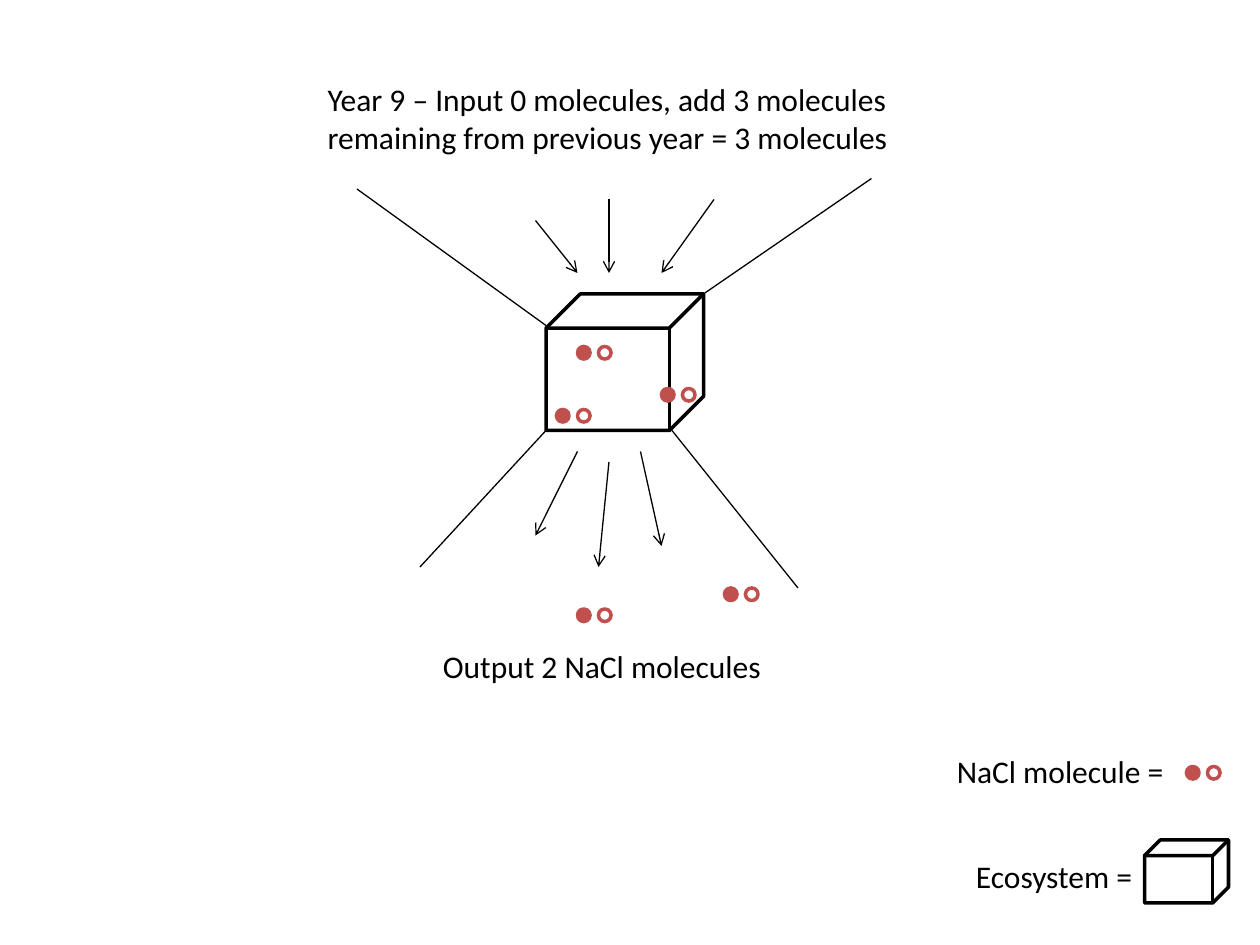
from lxml.etree import SubElement
from pptx import Presentation
from pptx.dml.color import RGBColor
from pptx.enum.shapes import MSO_CONNECTOR, MSO_SHAPE
from pptx.enum.text import MSO_ANCHOR, MSO_AUTO_SIZE, PP_ALIGN
from pptx.oxml.ns import qn
from pptx.util import Pt

BLACK = "000000"
RED = "C0504D"
ION_SIZE = 7.2
ION_STEP = 12

FUNNEL_LINES = [
    (312, 246, 240, 324),
    (384, 246, 456, 336),
    (312, 186, 204, 108),
    (402, 168, 498, 102),
]
FLOW_ARROWS = [
    (306, 126, 330, 156),
    (348, 114, 348, 156),
    (408, 114, 378, 156),
    (330, 258, 306, 306),
    (366, 258, 378, 312),
    (348, 264, 342, 324),
]
MOLECULES = [(330, 198), (318, 234), (378, 222), (330, 348), (414, 336)]


def paint(color_format, color):
    """Set a colour from a hex string."""
    color_format.rgb = RGBColor.from_string(color)


def add_outline(shapes, kind, left, top, width, height, color, filled=False):
    """Add a preset shape with a 2 pt line, solid or hollow."""
    shape = shapes.add_shape(kind, Pt(left), Pt(top), Pt(width), Pt(height))
    shape.shadow.inherit = False
    if filled:
        shape.fill.solid()
        paint(shape.fill.fore_color, color)
    else:
        shape.fill.background()
    paint(shape.line.color, color)
    shape.line.width = Pt(2)


def add_ecosystem(shapes, left, top, width, height):
    """Add the cube that stands for an ecosystem."""
    add_outline(shapes, MSO_SHAPE.CUBE, left, top, width, height, BLACK)


def add_molecule(shapes, left, top):
    """Add a group with one solid and one hollow ion, and return it."""
    group = shapes.add_group_shape()
    for index, filled in enumerate((True, False)):
        add_outline(group.shapes, MSO_SHAPE.OVAL, left + index * ION_STEP, top,
                    ION_SIZE, ION_SIZE, RED, filled)
    return group


def add_line(shapes, start_x, start_y, end_x, end_y, arrow=False):
    """Add a thin straight line, with an open arrowhead if asked."""
    line = shapes.add_connector(MSO_CONNECTOR.STRAIGHT, Pt(start_x), Pt(start_y),
                                Pt(end_x), Pt(end_y))
    paint(line.line.color, BLACK)
    line.line.width = Pt(0.75)
    if arrow:
        SubElement(line.line._get_or_add_ln(), qn("a:tailEnd"), type="arrow")
    SubElement(line._element.spPr, qn("a:effectLst"))


def format_text(box, text, align=PP_ALIGN.LEFT):
    """Fill a box with 18 pt black text that starts at the top."""
    frame = box.text_frame
    frame.text = text
    frame.word_wrap = True
    frame.vertical_anchor = MSO_ANCHOR.TOP
    frame.auto_size = MSO_AUTO_SIZE.SHAPE_TO_FIT_TEXT
    para = frame.paragraphs[0]
    para.alignment = align
    font = para.runs[0].font
    font.name = "Calibri"
    font.size = Pt(18)
    paint(font.color, BLACK)


def add_label(shapes, text, left, top, width, align=PP_ALIGN.LEFT):
    """Add a one-line text box."""
    box = shapes.add_textbox(Pt(left), Pt(top), Pt(width), Pt(29))
    format_text(box, text, align)


def set_title(page, text, left, top, width, height):
    """Move and format the title placeholder."""
    title = page.shapes.title
    title.left, title.top = Pt(left), Pt(top)
    title.width, title.height = Pt(width), Pt(height)
    format_text(title, text)


def main():
    """Build and save the slide."""
    deck = Presentation()
    deck.slide_width, deck.slide_height = Pt(720), Pt(540)
    page = deck.slides.add_slide(deck.slide_layouts[5])
    shapes = page.shapes

    set_title(page, "Year 9 – Input 0 molecules, add 3 molecules remaining "
              "from previous year = 3 molecules", 180, 42, 360, 51)
    add_ecosystem(shapes, 312, 168, 90, 78)
    for ends in FUNNEL_LINES:
        add_line(shapes, *ends)
    for ends in FLOW_ARROWS:
        add_line(shapes, *ends, arrow=True)
    for left, top in MOLECULES:
        add_molecule(shapes, left, top)
    add_label(shapes, "Output 2 NaCl molecules", 246, 366, 204)

    molecule_key = add_molecule(shapes, 678, 438)
    add_label(molecule_key.shapes, "NaCl molecule =", 522, 426, 150, PP_ALIGN.RIGHT)
    ecosystem_key = shapes.add_group_shape()
    add_ecosystem(ecosystem_key.shapes, 654, 480, 48, 36)
    add_label(ecosystem_key.shapes, "Ecosystem =", 546, 486, 108, PP_ALIGN.RIGHT)

    deck.save("out.pptx")


if __name__ == "__main__":
    main()
